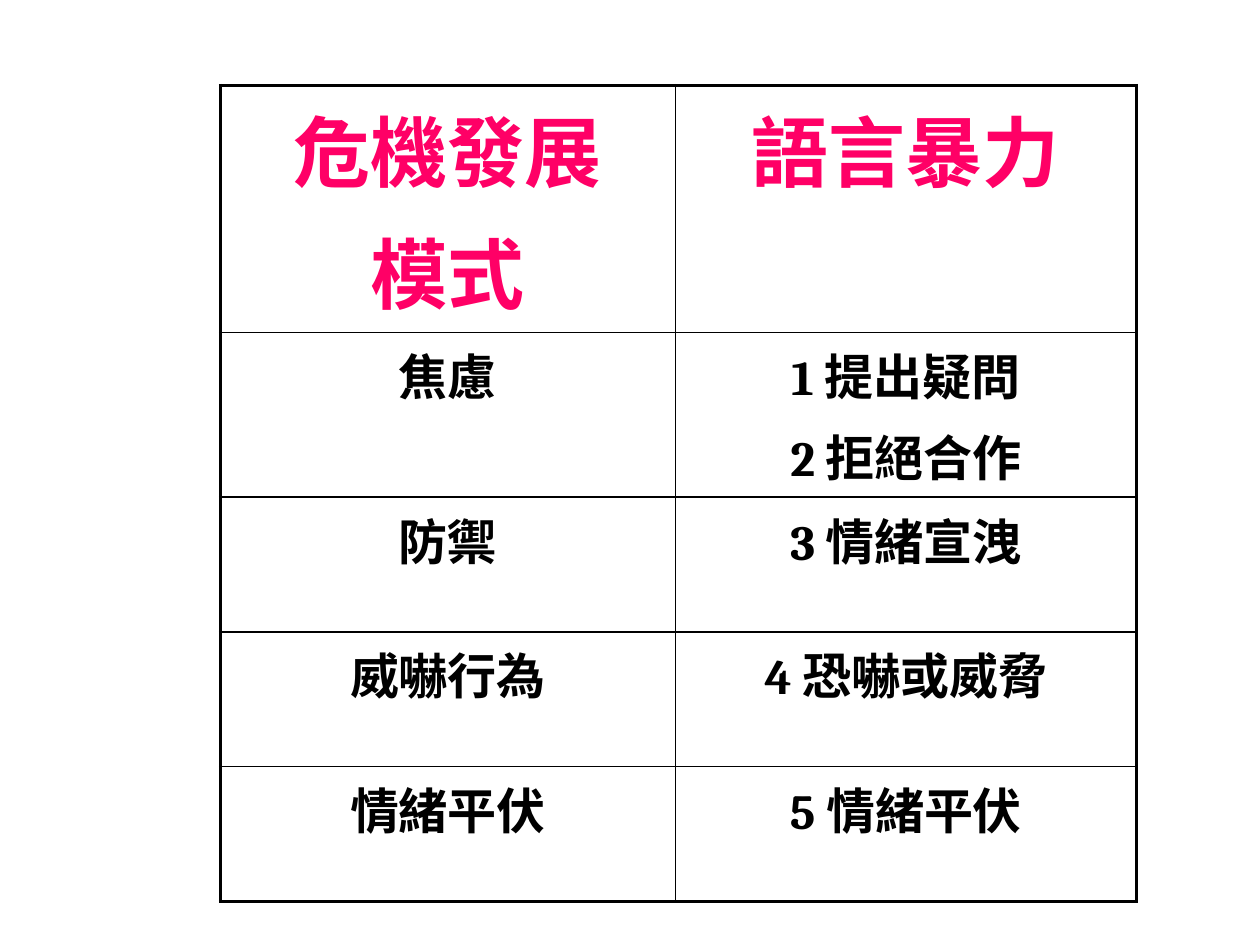
from typing import NamedTuple

from lxml import etree
from pptx import Presentation
from pptx.dml.color import RGBColor
from pptx.enum.lang import MSO_LANGUAGE_ID
from pptx.enum.text import PP_ALIGN
from pptx.oxml.ns import qn
from pptx.table import _Cell
from pptx.util import Inches, Pt

CENTER = PP_ALIGN.CENTER
CHINESE = MSO_LANGUAGE_ID.TRADITIONAL_CHINESE
PINK = RGBColor(0xFF, 0x00, 0x66)
BLACK = RGBColor(0x00, 0x00, 0x00)
FONT = "Cambria"
OUTER, INNER = Pt(2.25), Pt(1)


class TextStyle(NamedTuple):
    size: int
    color: RGBColor


class Stage(NamedTuple):
    height: float
    pattern: list[str]
    verbal: list[str]
    style: TextStyle


HEADING = TextStyle(44, PINK)
BODY = TextStyle(28, BLACK)
COLUMN_WIDTHS = [3.61, 3.66]
STAGES = [
    Stage(1.5, ["危機發展", "模式"], ["語言暴力"], HEADING),
    Stage(1.12, ["焦慮"], ["1 提出疑問", "2 拒絕合作"], BODY),
    Stage(1.07, ["防禦"], ["3 情緒宣洩"], BODY),
    Stage(1.07, ["威嚇行為"], ["4 恐嚇或威脅"], BODY),
    Stage(1.07, ["情緒平伏"], ["5 情緒平伏"], BODY),
]


def write_lines(cell: _Cell, lines: list[str], style: TextStyle) -> None:
    frame = cell.text_frame
    for index, line in enumerate(lines):
        paragraph = frame.add_paragraph() if index else frame.paragraphs[0]
        paragraph.alignment = CENTER
        paragraph.space_before = Pt(6)
        run = paragraph.add_run()
        run.text = line
        run.font.name = FONT
        run.font.size = Pt(style.size)
        run.font.bold = True
        run.font.color.rgb = style.color
        run.font.language_id = CHINESE


def draw_borders(cell: _Cell, widths: dict[str, int]) -> None:
    """Put the border lines ahead of the fill, as the schema asks."""
    properties = cell._tc.get_or_add_tcPr()
    for index, (side, width) in enumerate(widths.items()):
        line = etree.Element(qn(f"a:ln{side}"), w=str(width))
        fill = etree.SubElement(line, qn("a:solidFill"))
        etree.SubElement(fill, qn("a:srgbClr"), val=str(BLACK))
        properties.insert(index, line)


def main() -> None:
    presentation = Presentation()
    presentation.slide_width = Inches(10)
    presentation.slide_height = Inches(7.5)
    slide = presentation.slides.add_slide(presentation.slide_layouts[6])

    last_row, last_column = len(STAGES) - 1, len(COLUMN_WIDTHS) - 1
    crisis_table = slide.shapes.add_table(
        len(STAGES), len(COLUMN_WIDTHS), Inches(1.75), Inches(0.68),
        Inches(sum(COLUMN_WIDTHS)), Inches(sum(stage.height for stage in STAGES)),
    ).table
    crisis_table.first_row = False
    crisis_table.horz_banding = False
    for column, width in zip(crisis_table.columns, COLUMN_WIDTHS):
        column.width = Inches(width)

    for row, stage in enumerate(STAGES):
        crisis_table.rows[row].height = Inches(stage.height)
        for column, lines in enumerate((stage.pattern, stage.verbal)):
            cell = crisis_table.cell(row, column)
            cell.fill.background()
            write_lines(cell, lines, stage.style)
            draw_borders(cell, {
                "L": OUTER if column == 0 else INNER,
                "R": OUTER if column == last_column else INNER,
                "T": OUTER if row == 0 else INNER,
                "B": OUTER if row == last_row else INNER,
            })

    presentation.save("out.pptx")


if __name__ == "__main__":
    main()
